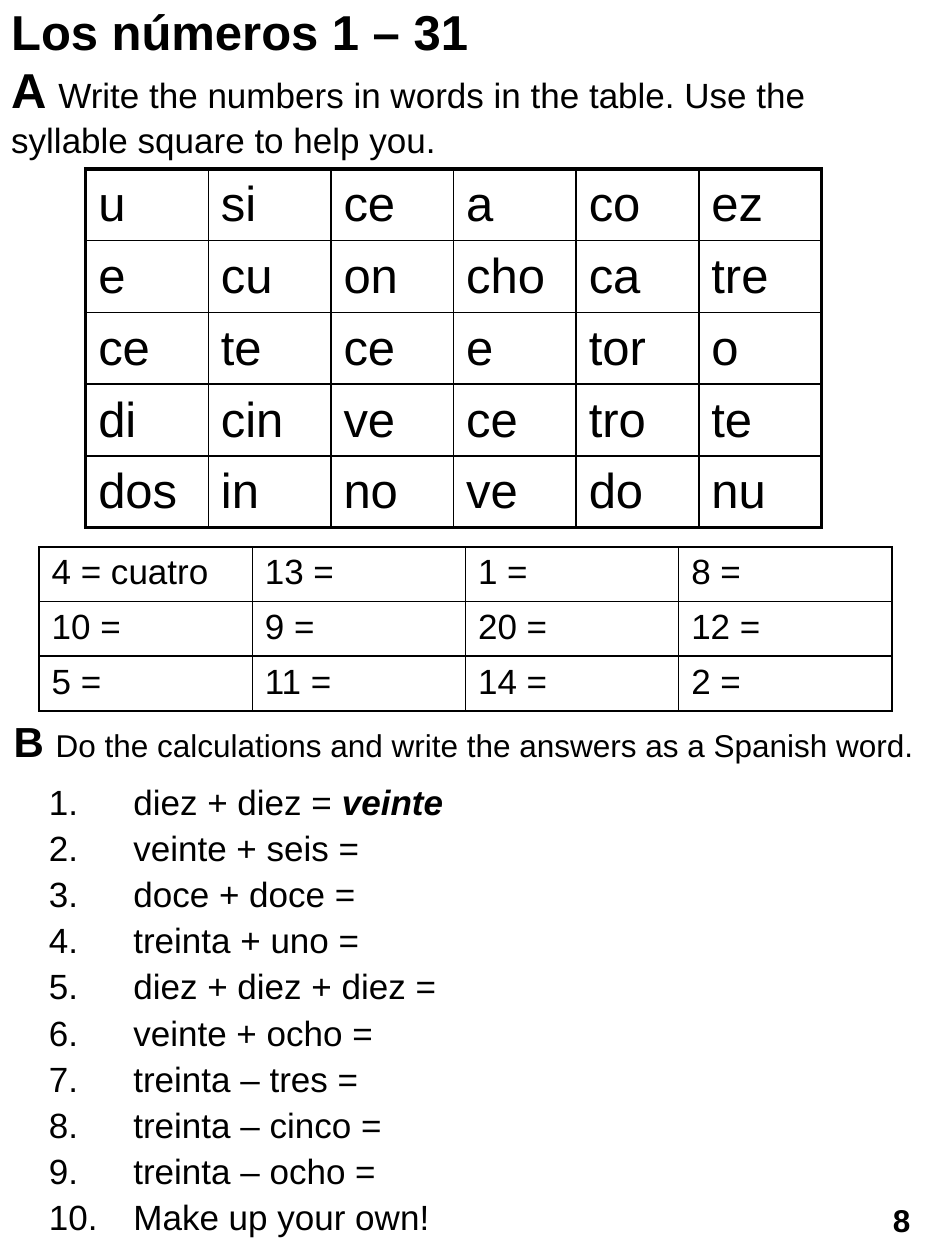
from lxml import etree
from pptx import Presentation
from pptx.dml.color import RGBColor
from pptx.enum.shapes import MSO_SHAPE
from pptx.enum.text import MSO_ANCHOR, PP_ALIGN
from pptx.oxml.ns import qn
from pptx.util import Inches, Pt

BLACK = RGBColor(0, 0, 0)
FONT = "Arial"
ROUND = MSO_SHAPE.ROUNDED_RECTANGLE
TOP, MIDDLE = MSO_ANCHOR.TOP, MSO_ANCHOR.MIDDLE
CENTER = PP_ALIGN.CENTER
THIN, THICK = Pt(1), Pt(2.25)

SQUARE = [
    "u si ce a co ez".split(),
    "e cu on cho ca tre".split(),
    "ce te ce e tor o".split(),
    "di cin ve ce tro te".split(),
    "dos in no ve do nu".split(),
]
WORDS = [
    ["4 = cuatro", "13 =", "1 =", "8 ="],
    ["10 =", "9 =", "20 =", "12 ="],
    ["5 =", "11 =", "14 =", "2 ="],
]
SUMS = [
    "diez + diez = ", "veinte + seis =", "doce + doce =",
    "treinta + uno =", "diez + diez + diez =", "veinte + ocho =",
    "treinta – tres =", "treinta – cinco =", "treinta – ocho =",
    "Make up your own!",
]


def style(run, size, bold=False, italic=False):
    font = run.font
    font.name, font.size = FONT, Pt(size)
    font.bold, font.italic = bold, italic
    font.color.rgb = BLACK


def add_run(para, text, size, bold=False, italic=False):
    run = para.add_run()
    run.text = text
    style(run, size, bold, italic)


def add_box(slide, left, top, width, height):
    box = slide.shapes.add_textbox(
        Inches(left), Inches(top), Inches(width), Inches(height))
    box.text_frame.word_wrap = True
    return box.text_frame


def add_edge(cell, index, side, width):
    line = etree.Element(qn("a:ln" + side), w=str(int(width)))
    fill = etree.SubElement(line, qn("a:solidFill"))
    etree.SubElement(fill, qn("a:srgbClr"), val=str(BLACK))
    cell._tc.get_or_add_tcPr().insert(index, line)


def add_grid(slide, data, left, top, width, height, size, anchor, frame):
    rows, cols = len(data), len(data[0])
    table = slide.shapes.add_table(
        rows, cols, Inches(left), Inches(top),
        Inches(width), Inches(height)).table
    table.first_row = table.horz_banding = False
    for r, row in enumerate(data):
        for c, text in enumerate(row):
            cell = table.cell(r, c)
            cell.fill.background()
            cell.vertical_anchor = anchor
            cell.text_frame.text = text
            style(cell.text_frame.paragraphs[0].runs[0], size)
            # The outer frame may be heavier than the inner lines
            outer = {"L": c == 0, "R": c == cols - 1,
                     "T": r == 0, "B": r == rows - 1}
            for i, (side, edge) in enumerate(outer.items()):
                add_edge(cell, i, side, frame if edge else THIN)


def add_list(slide):
    frame = add_box(slide, 0.29, 6.18, 9.37, 5.98)
    for i, text in enumerate(SUMS):
        para = frame.add_paragraph() if i else frame.paragraphs[0]
        add_run(para, text, 20)
        para.line_spacing = 0.9
        para.space_before = Pt(4.8 if i else 0)
        props = para._p.get_or_add_pPr()
        props.set("marL", str(Inches(0.67)))
        props.set("indent", str(-Inches(0.67)))
        etree.SubElement(props, qn("a:buAutoNum"), type="arabicPeriod")
    add_run(frame.paragraphs[0], "veinte", 20, True, True)


def add_page(slide):
    shape = slide.shapes.add_shape(
        ROUND, Inches(6.88), Inches(9.45), Inches(0.55), Inches(0.47))
    shape.shadow.inherit = False
    shape.fill.background()
    shape.line.fill.background()
    shape.text_frame.vertical_anchor = MIDDLE
    para = shape.text_frame.paragraphs[0]
    para.alignment = CENTER
    add_run(para, "8", 18, True)


def main():
    deck = Presentation()
    deck.slide_width, deck.slide_height = Inches(7.5), Inches(10)
    slide = deck.slides.add_slide(deck.slide_layouts[6])

    # Title and task A
    para = add_box(slide, -0.01, -0.04, 7.42, 1.38).paragraphs[0]
    add_run(para, "Los números 1 – 31", 28, True)
    para.add_line_break()
    add_run(para, "A ", 28, True)
    add_run(para, "Write the numbers in words in the table. "
            "Use the syllable square to help you.", 20)

    # Syllable square and answer table
    add_grid(slide, SQUARE, 0.68, 1.34, 5.84, 2.85, 28, MIDDLE, THICK)
    add_grid(slide, WORDS, 0.31, 4.34, 6.77, 1.3, 20, TOP, THIN)

    # Task B
    add_list(slide)
    para = add_box(slide, 0.01, 5.63, 7.49, 0.5).paragraphs[0]
    add_run(para, "B ", 24, True)
    add_run(para, "Do the calculations and write the answers "
            "as a Spanish word.", 18)

    # Page number
    add_page(slide)
    deck.save("out.pptx")


if __name__ == "__main__":
    main()
